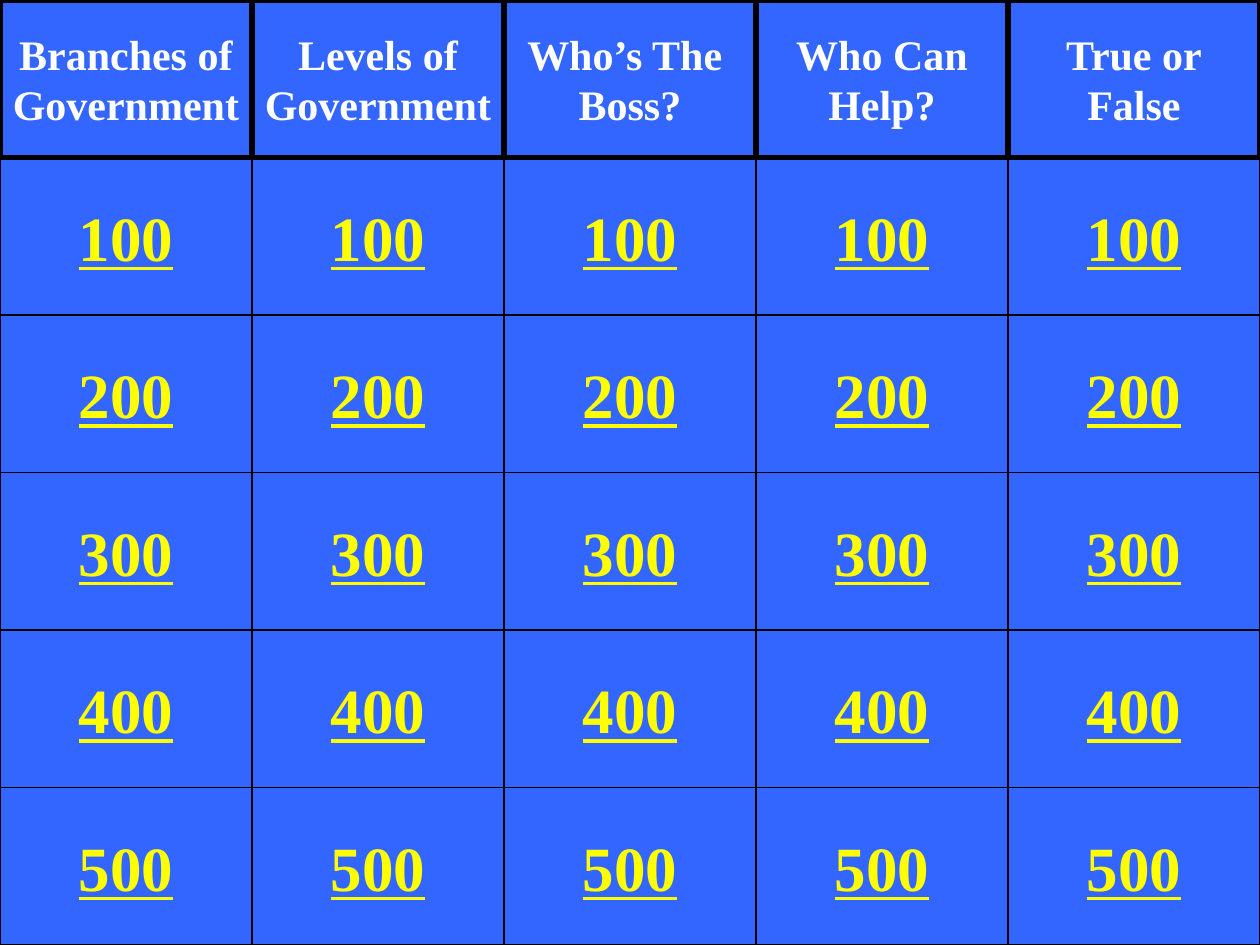
from dataclasses import dataclass

from pptx import Presentation
from pptx import util as u
from pptx.dml.color import RGBColor
from pptx.enum import shapes, text


@dataclass(frozen=True)
class Theme:
    font: str = "Times New Roman"
    board: RGBColor = RGBColor(0x33, 0x66, 0xFF)
    border: RGBColor = RGBColor(0x00, 0x00, 0x00)
    heading: RGBColor = RGBColor(0xFF, 0xFF, 0xFF)
    points: RGBColor = RGBColor(0xFF, 0xFF, 0x00)
    heading_size: u.Pt = u.Pt(24)
    points_size: u.Pt = u.Pt(36)
    heading_line: u.Pt = u.Pt(3)
    points_line: u.Pt = u.Pt(0.75)


THEME = Theme()
WIDTH, HEIGHT = u.Inches(10), u.Inches(7.5)

CATEGORIES = [
    "Branches of\nGovernment",
    "Levels of\nGovernment",
    "Who’s The \nBoss?",
    "Who Can\nHelp?",
    "True or\nFalse",
]
POINTS = [100, 200, 300, 400, 500]

# Grid: one column per category, a heading row plus one row per value
COL_W = WIDTH // len(CATEGORIES)
ROW_H = HEIGHT // (len(POINTS) + 1)


def add_cell(slide, kind, col, row, label, line_width):
    """Add a filled, outlined shape with centred text in one grid cell."""
    sp = slide.shapes.add_shape(kind, col * COL_W, row * ROW_H, COL_W, ROW_H)
    sp.shadow.inherit = False
    sp.fill.solid()
    sp.fill.fore_color.rgb = THEME.board
    sp.line.color.rgb = THEME.border
    sp.line.width = line_width
    tf = sp.text_frame
    tf.word_wrap = False
    tf.vertical_anchor = text.MSO_ANCHOR.MIDDLE
    tf.text = label
    return tf


def format_text(tf, size, color, underline=False):
    for p in tf.paragraphs:
        p.alignment = text.PP_ALIGN.CENTER
        for r in p.runs:
            r.font.name = THEME.font
            r.font.size = size
            r.font.bold = True
            r.font.underline = underline
            r.font.color.rgb = color


def add_points_button(slide, col, row, value):
    kind = shapes.MSO_SHAPE.ACTION_BUTTON_CUSTOM
    tf = add_cell(slide, kind, col, row, str(value), THEME.points_line)
    format_text(tf, THEME.points_size, THEME.points, underline=True)


def add_heading(slide, col, label):
    kind = shapes.MSO_SHAPE.RECTANGLE
    tf = add_cell(slide, kind, col, 0, label, THEME.heading_line)
    format_text(tf, THEME.heading_size, THEME.heading)


def main():
    prs = Presentation()
    prs.slide_width, prs.slide_height = WIDTH, HEIGHT
    slide = prs.slides.add_slide(prs.slide_layouts[6])

    # Background
    fill = slide.background.fill
    fill.solid()
    fill.fore_color.rgb = THEME.board

    # Point values
    for col in range(len(CATEGORIES)):
        for row, value in enumerate(POINTS, start=1):
            add_points_button(slide, col, row, value)

    # Category headings, in front so their heavy borders stay whole
    for col, label in enumerate(CATEGORIES):
        add_heading(slide, col, label)

    prs.save("out.pptx")


if __name__ == "__main__":
    main()
